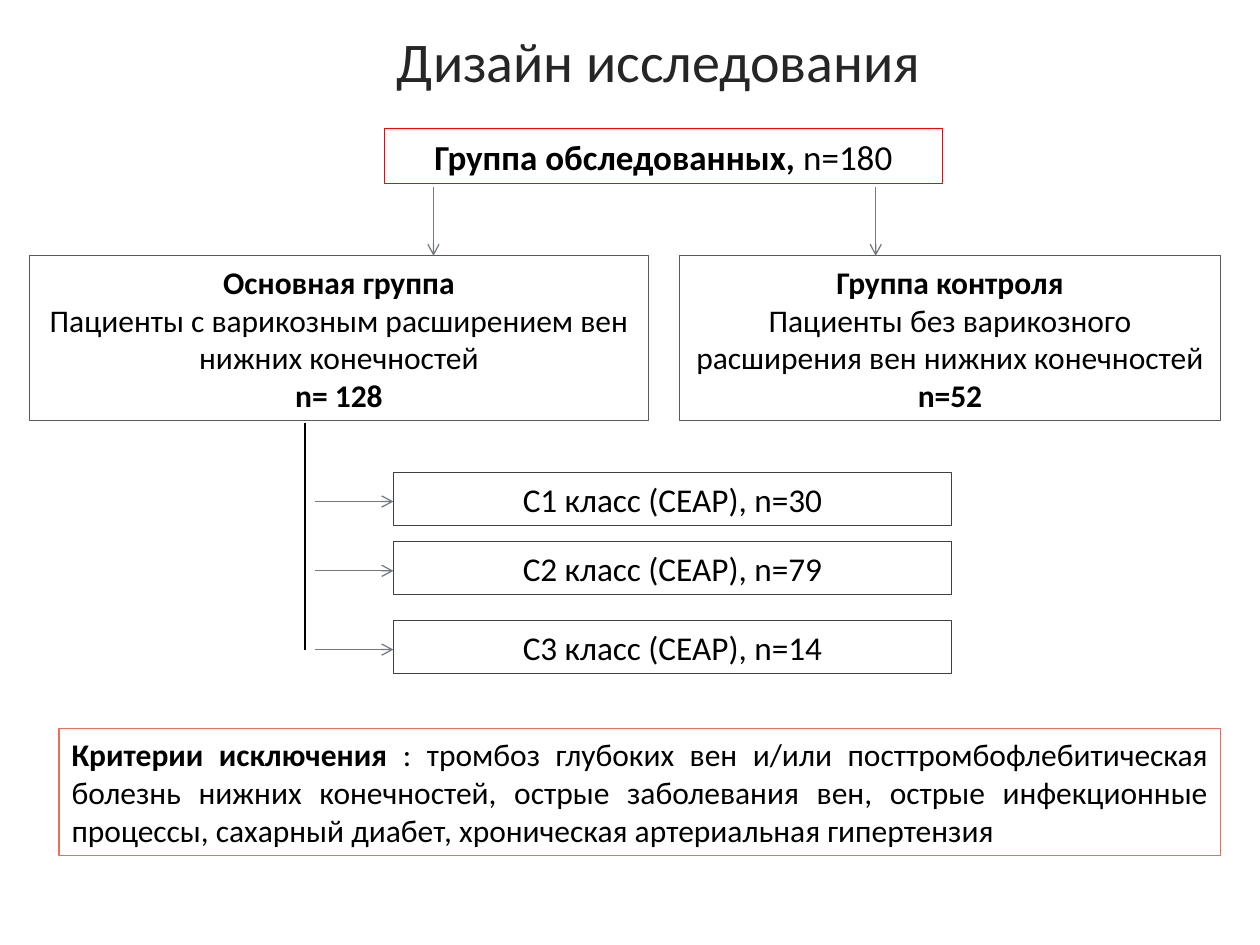
from lxml import etree
from pptx import Presentation
from pptx.dml.color import RGBColor
from pptx.enum.shapes import MSO_CONNECTOR, MSO_SHAPE
from pptx.enum.text import MSO_ANCHOR, PP_ALIGN
from pptx.oxml.ns import qn
from pptx.util import Pt

RECT, STRAIGHT = MSO_SHAPE.RECTANGLE, MSO_CONNECTOR.STRAIGHT
MIDDLE = MSO_ANCHOR.MIDDLE
CENTER, JUSTIFY = PP_ALIGN.CENTER, PP_ALIGN.JUSTIFY

BLACK = RGBColor(0x00, 0x00, 0x00)
WHITE = RGBColor(0xFF, 0xFF, 0xFF)
TITLE_GRAY = RGBColor(0x26, 0x26, 0x26)
CLASS_GRAY = RGBColor(0x40, 0x40, 0x40)
GROUP_GRAY = RGBColor(0x59, 0x59, 0x59)
ARROW_GRAY = RGBColor(0x74, 0x79, 0x81)
RED = RGBColor(0xFF, 0x00, 0x00)
CORAL = RGBColor(0xEB, 0x6E, 0x5A)

prs = Presentation()
prs.slide_width, prs.slide_height = Pt(720), Pt(540)
s = prs.slides.add_slide(prs.slide_layouts[6])


def add_box(left, top, width, height, paragraphs, size, line_color,
            line_width=0.5, fill=None, align=CENTER):
    """Add a framed box; each paragraph is a list of (text, bold) runs."""
    sp = s.shapes.add_shape(RECT, Pt(left), Pt(top), Pt(width), Pt(height))
    sp.shadow.inherit = False
    if fill is None:
        sp.fill.background()
    else:
        sp.fill.solid()
        sp.fill.fore_color.rgb = fill
    sp.line.color.rgb = line_color
    sp.line.width = Pt(line_width)
    tf = sp.text_frame
    tf.word_wrap = True
    tf.vertical_anchor = MIDDLE
    for i, runs in enumerate(paragraphs):
        p = tf.add_paragraph() if i else tf.paragraphs[0]
        p.alignment = align
        for text, bold in runs:
            r = p.add_run()
            r.text = text
            r.font.name, r.font.size, r.font.bold = "Calibri", Pt(size), bold
            r.font.color.rgb = BLACK


def add_line(x1, y1, x2, y2, color, arrow=True):
    line = s.shapes.add_connector(STRAIGHT, Pt(x1), Pt(y1), Pt(x2), Pt(y2))
    line.line.color.rgb = color
    line.line.width = Pt(0.75)
    if arrow:
        etree.SubElement(line.line._get_or_add_ln(), qn("a:tailEnd"), type="arrow")
    etree.SubElement(line._element.spPr, qn("a:effectLst"))


# Title
title = s.shapes.add_textbox(Pt(50.4), Pt(11.5), Pt(652.3), Pt(45.4))
tf = title.text_frame
tf.word_wrap = True
tf.vertical_anchor = MIDDLE
tf.text = "Дизайн исследования"
p = tf.paragraphs[0]
p.alignment = CENTER
font = p.runs[0].font
font.name, font.size = "Calibri", Pt(32)
font.color.rgb = TITLE_GRAY

# All examined patients, split into two groups
add_box(219.6, 73.4, 319, 31.7,
        [[("Группа обследованных, ", True), ("n=180", False)]], 20, RED)

GROUP_TOP = 146.2
groups = [
    (16.6, 354.2, 247.7, "Основная группа",
     "Пациенты с варикозным расширением вен нижних конечностей", "n= 128"),
    (388.1, 309.6, 500.4, "Группа контроля",
     "Пациенты без варикозного расширения вен нижних конечностей", "n=52"),
]
for left, width, arrow_x, name, patients, count in groups:
    add_box(left, GROUP_TOP, width, 94.3,
            [[(name, True)], [(patients, False)], [(count, True)]], 18, GROUP_GRAY)
    add_line(arrow_x, 107, arrow_x, GROUP_TOP, ARROW_GRAY)

# Classes within the main group
CLASS_LEFT, CLASS_HEIGHT = 224.8, 30.2
classes = [
    (270, "С1 класс (СЕАР), n=30"),
    (309.6, "С2 класс (СЕАР), n=79"),
    (354.6, "С3 класс (СЕАР), n=14"),
]
for top, text in classes:
    add_box(CLASS_LEFT, top, 319, CLASS_HEIGHT, [[(text, False)]], 19,
            CLASS_GRAY, fill=WHITE)
    y = top + CLASS_HEIGHT / 2 + 1.5
    add_line(180, y, CLASS_LEFT, y, ARROW_GRAY)
add_line(174.3, 242, 174.3, 371.5, BLACK, arrow=False)

# Exclusion criteria
add_box(33.8, 416.2, 663.8, 72.7,
        [[("Критерии исключения ", True),
          (": тромбоз глубоких вен и/или посттромбофлебитическая болезнь "
           "нижних конечностей, острые заболевания вен, острые инфекционные "
           "процессы, сахарный диабет, хроническая артериальная гипертензия",
           False)]],
        18, CORAL, line_width=0.75, align=JUSTIFY)

prs.save("out.pptx")
